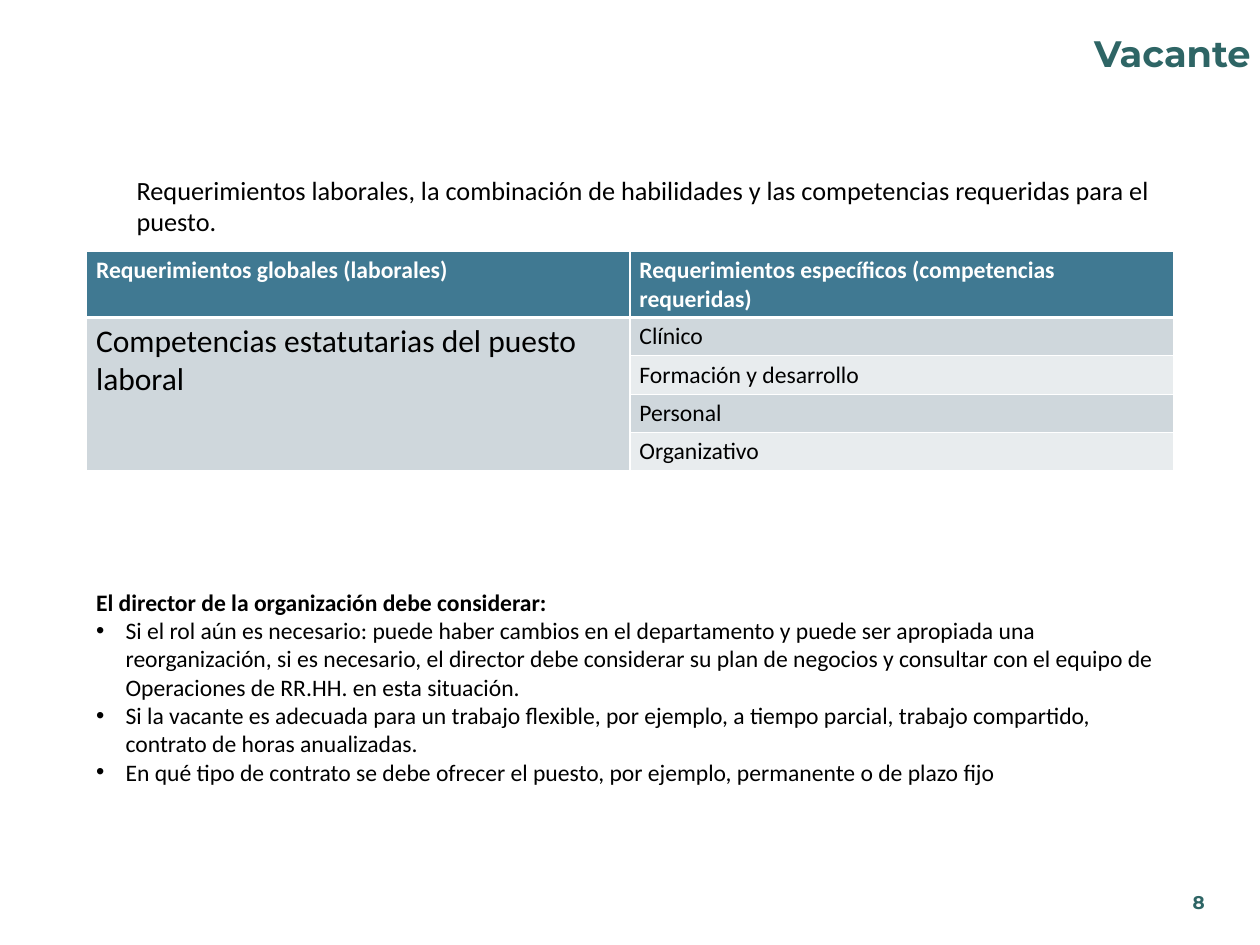
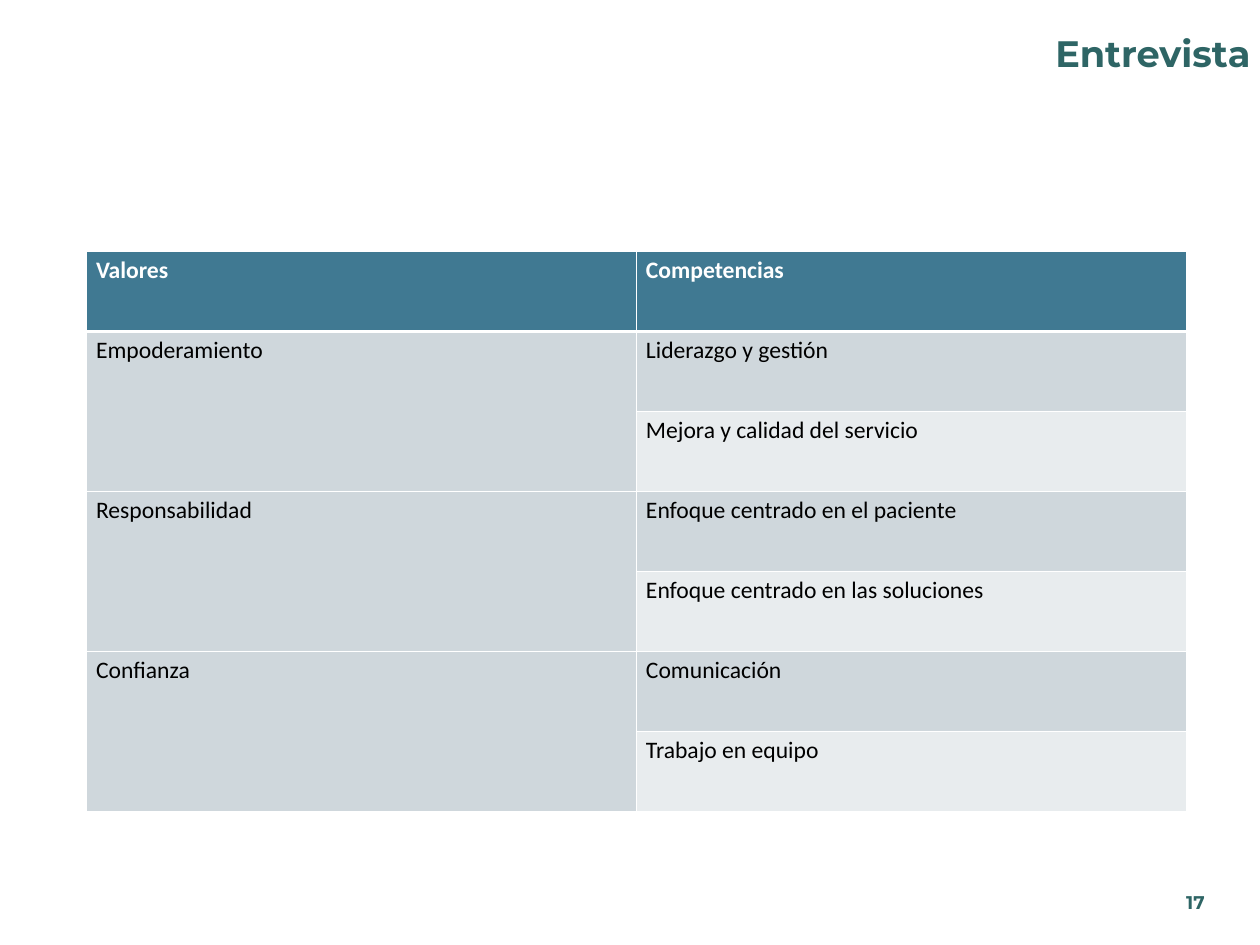
from dataclasses import dataclass

from lxml import etree
from pptx import Presentation
from pptx.dml.color import RGBColor
from pptx.enum import text
from pptx.oxml import ns
from pptx.util import Pt


@dataclass(frozen=True)
class Theme:
    heading_font: str = "Montserrat"
    body_font: str = "Calibri"
    accent: str = "2E6565"
    header: str = "407992"
    bands: tuple = ("CFD7DC", "E8ECEE")
    white: str = "FFFFFF"
    black: str = "000000"
    title_size: int = 28
    lead_size: int = 20
    body_size: int = 18
    number_size: int = 14


T = Theme()
RIGHT = text.PP_ALIGN.RIGHT
MIDDLE = text.MSO_ANCHOR.MIDDLE
TITLE_ONLY, TITLE_AND_BODY = 5, 1

# Boxes are left, top, width, height in points.
SLIDE_SIZE = (960, 720)
TITLE_BOX = (380, 0, 580, 84)
NUMBER_BOX = (709, 668, 216, 38)
LEAD_BOX = (97, 129, 787, 55)
LIST_BOX = (66, 444, 828, 181)
TABLE_LEFT, TABLE_TOP = 66, 191.5
BULLET_INDENT = 22.5

VACANCY = {
    "title": "Vacante",
    "number": 8,
    "lead": "Requerimientos laborales, la combinación de habilidades y las "
            "competencias requeridas para el puesto.",
    "table": {
        "width": 828, "row_height": 29.2, "group_size": 24,
        "head": ("Requerimientos globales (laborales)",
                 "Requerimientos específicos (competencias requeridas)"),
        "groups": [
            ("Competencias estatutarias del puesto laboral",
             ["Clínico", "Formación y desarrollo", "Personal", "Organizativo"]),
        ],
    },
    "list_head": "El director de la organización debe considerar:",
    "list": [
        "Si el rol aún es necesario: puede haber cambios en el departamento y "
        "puede ser apropiada una reorganización, si es necesario, el director "
        "debe considerar su plan de negocios y consultar con el equipo de "
        "Operaciones de RR.HH. en esta situación.",
        "Si la vacante es adecuada para un trabajo flexible, por ejemplo, a "
        "tiempo parcial, trabajo compartido, contrato de horas anualizadas.",
        "En qué tipo de contrato se debe ofrecer el puesto, por ejemplo, "
        "permanente o de plazo fijo",
    ],
}

INTERVIEW = {
    "title": "Entrevista",
    "number": 17,
    "table": {
        "width": 838, "row_height": 61, "group_size": T.body_size,
        "head": ("Valores", "Competencias"),
        "groups": [
            ("Empoderamiento",
             ["Liderazgo y gestión", "Mejora y calidad del servicio"]),
            ("Responsabilidad",
             ["Enfoque centrado en el paciente",
              "Enfoque centrado en las soluciones"]),
            ("Confianza", ["Comunicación", "Trabajo en equipo"]),
        ],
    },
}


def write(p, words, size=T.body_size, font=T.body_font, color=T.black,
          bold=False, align=None, spacing=None):
    p.alignment = align
    p.line_spacing = spacing
    r = p.add_run()
    r.text = words
    r.font.size, r.font.name, r.font.bold = Pt(size), font, bold
    r.font.color.rgb = RGBColor.from_string(color)


def place(sp, box):
    sp.left, sp.top, sp.width, sp.height = map(Pt, box)


def add_text(s, box, words, anchor=text.MSO_ANCHOR.TOP, **fmt):
    tf = s.shapes.add_textbox(*map(Pt, box)).text_frame
    tf.word_wrap = True
    tf.vertical_anchor = anchor
    write(tf.paragraphs[0], words, **fmt)


def set_bullet(p, char=None):
    """Give the paragraph a hanging bullet, or none."""
    p.space_before = Pt(0)
    pPr = p._p.get_or_add_pPr()
    indent = Pt(BULLET_INDENT) if char else 0
    pPr.set("marL", str(indent))
    pPr.set("indent", str(-indent))
    if char:
        etree.SubElement(pPr, ns.qn("a:buFont"), typeface="Arial")
        etree.SubElement(pPr, ns.qn("a:buChar"), char=char)
    else:
        etree.SubElement(pPr, ns.qn("a:buNone"))


def set_borders(cell, **widths):
    tcPr = cell._tc.get_or_add_tcPr()
    for i, side in enumerate("LRTB"):
        ln = etree.Element(ns.qn(f"a:ln{side}"), w=str(Pt(widths.get(side, 1))))
        fill = etree.SubElement(ln, ns.qn("a:solidFill"))
        etree.SubElement(fill, ns.qn("a:srgbClr"), val=T.white)
        tcPr.insert(i, ln)


def add_table(s, head, groups, width, row_height, group_size):
    """Two columns: each group on the left spans its items on the right."""
    rows = 1 + sum(len(items) for _, items in groups)
    table = s.shapes.add_table(rows, 2, Pt(TABLE_LEFT), Pt(TABLE_TOP),
                               Pt(width), Pt(rows * row_height)).table
    for row in table.rows:
        row.height = Pt(row_height)

    def fill_cell(row, col, background, words=None, **fmt):
        cell = table.cell(row, col)
        cell.fill.solid()
        cell.fill.fore_color.rgb = RGBColor.from_string(background)
        set_borders(cell, T=3 if row == 1 else 1, B=3 if row == 0 else 1)
        if words:
            write(cell.text_frame.paragraphs[0], words, **fmt)

    for col, words in enumerate(head):
        fill_cell(0, col, T.header, words, color=T.white, bold=True)
    row = 1
    for group, items in groups:
        table.cell(row, 0).merge(table.cell(row + len(items) - 1, 0))
        for i, item in enumerate(items):
            fill_cell(row + i, 0, T.bands[0], None if i else group,
                      size=group_size)
            fill_cell(row + i, 1, T.bands[(row + i - 1) % 2], item)
        row += len(items)


def add_list(s, head, items):
    body = s.placeholders[1]
    place(body, LIST_BOX)
    tf = body.text_frame
    tf.auto_size = text.MSO_AUTO_SIZE.NONE
    set_bullet(tf.paragraphs[0])
    write(tf.paragraphs[0], head, bold=True)
    for item in items:
        p = tf.add_paragraph()
        set_bullet(p, "•")
        write(p, item)


def add_slide(prs, content):
    layout = TITLE_AND_BODY if "list" in content else TITLE_ONLY
    s = prs.slides.add_slide(prs.slide_layouts[layout])
    brand = dict(font=T.heading_font, color=T.accent, bold=True, align=RIGHT)
    title = s.shapes.title
    place(title, TITLE_BOX)
    title.text_frame.vertical_anchor = MIDDLE
    write(title.text_frame.paragraphs[0], content["title"],
          size=T.title_size, spacing=0.9, **brand)
    add_text(s, NUMBER_BOX, str(content["number"]), anchor=MIDDLE,
             size=T.number_size, **brand)
    add_table(s, **content["table"])
    if "lead" in content:
        add_text(s, LEAD_BOX, content["lead"], size=T.lead_size)
    if "list" in content:
        add_list(s, content["list_head"], content["list"])


def main():
    prs = Presentation()
    prs.slide_width, prs.slide_height = map(Pt, SLIDE_SIZE)
    for content in (VACANCY, INTERVIEW):
        add_slide(prs, content)
    prs.save("out.pptx")


if __name__ == "__main__":
    main()
